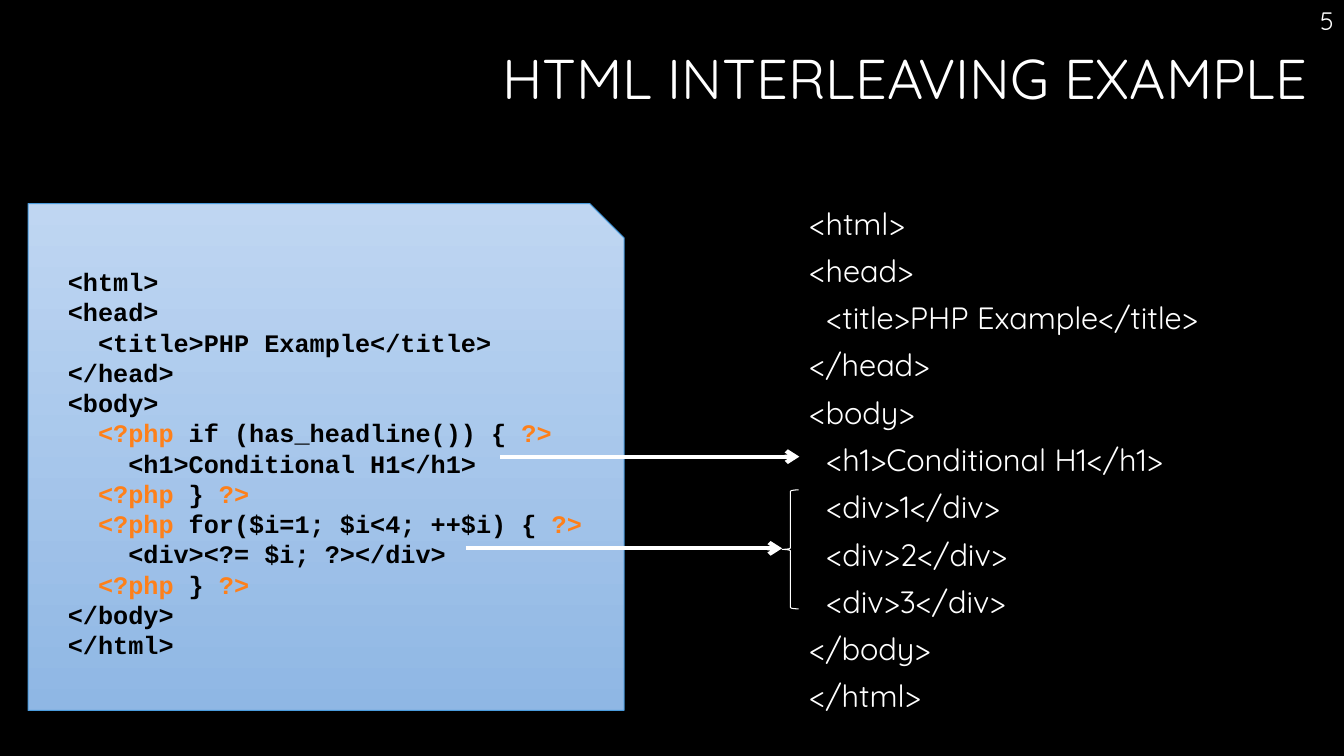
from dataclasses import dataclass

from lxml.etree import SubElement
from pptx import Presentation
from pptx.dml.color import RGBColor
from pptx.enum.shapes import MSO_CONNECTOR, MSO_SHAPE
from pptx.enum.text import MSO_ANCHOR, MSO_AUTO_SIZE, PP_ALIGN
from pptx.oxml.ns import qn
from pptx.util import Pt


@dataclass(frozen=True)
class Theme:
    background = RGBColor.from_string("000000")
    light = RGBColor.from_string("FFFFFF")
    code = RGBColor.from_string("000000")
    php_tag = RGBColor.from_string("FE801A")
    card_top = RGBColor.from_string("BFD6F2")
    card_bottom = RGBColor.from_string("8FB7E4")
    card_edge = RGBColor.from_string("4A9BDC")
    text_font = "Quicksand"
    code_font = "Courier New"
    title_size = Pt(40)
    output_size = Pt(22)
    small_size = Pt(18)


theme = Theme()


def place(part, left, top, width, height):
    part.left, part.top, part.width, part.height = Pt(left), Pt(top), Pt(width), Pt(height)


def style(run, font, size, color, bold=False):
    run.font.name = font
    run.font.size = size
    run.font.color.rgb = color
    run.font.bold = bold


presentation = Presentation()
presentation.slide_width = Pt(960)
presentation.slide_height = Pt(540)
slide = presentation.slides.add_slide(presentation.slide_layouts[1])
slide.background.fill.solid()
slide.background.fill.fore_color.rgb = theme.background

headline = slide.shapes.title
place(headline, 18.7, 33, 922.3, 101.5)
headline.text_frame.text = "HTML INTERLEAVING EXAMPLE"
headline.text_frame.vertical_anchor = MSO_ANCHOR.TOP
headline.text_frame.auto_size = MSO_AUTO_SIZE.NONE
headline_line = headline.text_frame.paragraphs[0]
headline_line.alignment = PP_ALIGN.RIGHT
headline_line.line_spacing = 0.9
style(headline_line.runs[0], theme.text_font, theme.title_size, theme.light)

output_lines = [
    (0, "<html>"),
    (0, "<head>"),
    (1, "<title>PHP Example</title>"),
    (0, "</head>"),
    (0, "<body>"),
    (1, "<h1>Conditional H1</h1>"),
    (1, "<div>1</div>"),
    (1, "<div>2</div>"),
    (1, "<div>3</div>"),
    (0, "</body>"),
    (0, "</html>"),
]
output = slide.placeholders[1]
place(output, 571, 145.4, 370, 362)
output.text_frame.text = "\n".join(text for _, text in output_lines)
output.text_frame.vertical_anchor = MSO_ANCHOR.TOP
output.text_frame.auto_size = MSO_AUTO_SIZE.NONE
for (depth, _), paragraph in zip(output_lines, output.text_frame.paragraphs):
    paragraph.line_spacing = 0.9
    paragraph.space_before = Pt(10)
    properties = paragraph._p.get_or_add_pPr()
    properties.set("marL", str(Pt(12 * depth)))
    properties.set("indent", "0")
    SubElement(properties, qn("a:buNone"))
    style(paragraph.runs[0], theme.text_font, theme.output_size, theme.light)

page_number = slide.shapes.add_textbox(Pt(752.4), Pt(0), Pt(207.6), Pt(29))
page_number.text_frame.word_wrap = True
page_number.text_frame.text = "5"
page_number.text_frame.paragraphs[0].alignment = PP_ALIGN.RIGHT
style(page_number.text_frame.paragraphs[0].runs[0], theme.text_font, theme.small_size, theme.light)

source_lines = [
    (0, "<html>"),
    (0, "<head>"),
    (1, "<title>PHP Example</title>"),
    (0, "</head>"),
    (0, "<body>"),
    (1, "<?php if (has_headline()) { ?>"),
    (2, "<h1>Conditional H1</h1>"),
    (1, "<?php } ?>"),
    (1, "<?php for($i=1; $i<4; ++$i) { ?>"),
    (2, "<div><?= $i; ?></div>"),
    (1, "<?php } ?>"),
    (0, "</body>"),
    (0, "</html>"),
]
source_card = slide.shapes.add_shape(
    MSO_SHAPE.SNIP_1_RECTANGLE, Pt(20), Pt(145.4), Pt(425.8), Pt(362)
)
source_card.adjustments[0] = 0.068
source_card.shadow.inherit = False
source_card.fill.gradient()
source_card.fill.gradient_angle = 270
card_stops = source_card.fill.gradient_stops
for stop, position, color in zip(card_stops, (0, 1), (theme.card_top, theme.card_bottom)):
    stop.position = position
    stop.color.rgb = color
source_card.line.color.rgb = theme.card_edge
source_card.line.width = Pt(0.75)

source_text = source_card.text_frame
source_text.word_wrap = True
source_text.vertical_anchor = MSO_ANCHOR.MIDDLE
source_text.margin_left, source_text.margin_right = Pt(28.4), Pt(7.2)
source_text.margin_top, source_text.margin_bottom = Pt(0), Pt(3.6)
source_text.text = "\n" * (len(source_lines) - 1)
for (depth, text), paragraph in zip(source_lines, source_text.paragraphs):
    paragraph.alignment = PP_ALIGN.LEFT
    paragraph._p.get_or_add_pPr().set("marL", str(Pt(21.6 * depth)))
    if text.startswith("<?php"):
        pieces = [
            ("<?php", theme.php_tag),
            (text[5:-2], theme.code),
            ("?>", theme.php_tag),
        ]
    else:
        pieces = [(text, theme.code)]
    for piece, color in pieces:
        run = paragraph.add_run()
        run.text = piece
        style(run, theme.code_font, theme.small_size, color, bold=True)

for start, end, height in ((357, 571, 326.2), (332.6, 558.7, 391.7)):
    arrow = slide.shapes.add_connector(
        MSO_CONNECTOR.CURVE, Pt(start), Pt(height), Pt(end), Pt(height)
    )
    arrow.line.color.rgb = theme.light
    arrow.line.width = Pt(3)
    arrow_properties = arrow._element.spPr
    SubElement(arrow_properties.find(qn("a:ln")), qn("a:tailEnd"), type="arrow")
    SubElement(arrow_properties, qn("a:effectLst"))

loop_brace = slide.shapes.add_shape(
    MSO_SHAPE.LEFT_BRACE, Pt(558.7), Pt(349.9), Pt(11.8), Pt(85)
)
loop_brace.shadow.inherit = False
loop_brace.fill.background()
loop_brace.line.color.rgb = theme.light
loop_brace.line.width = Pt(0.75)

presentation.save("out.pptx")
